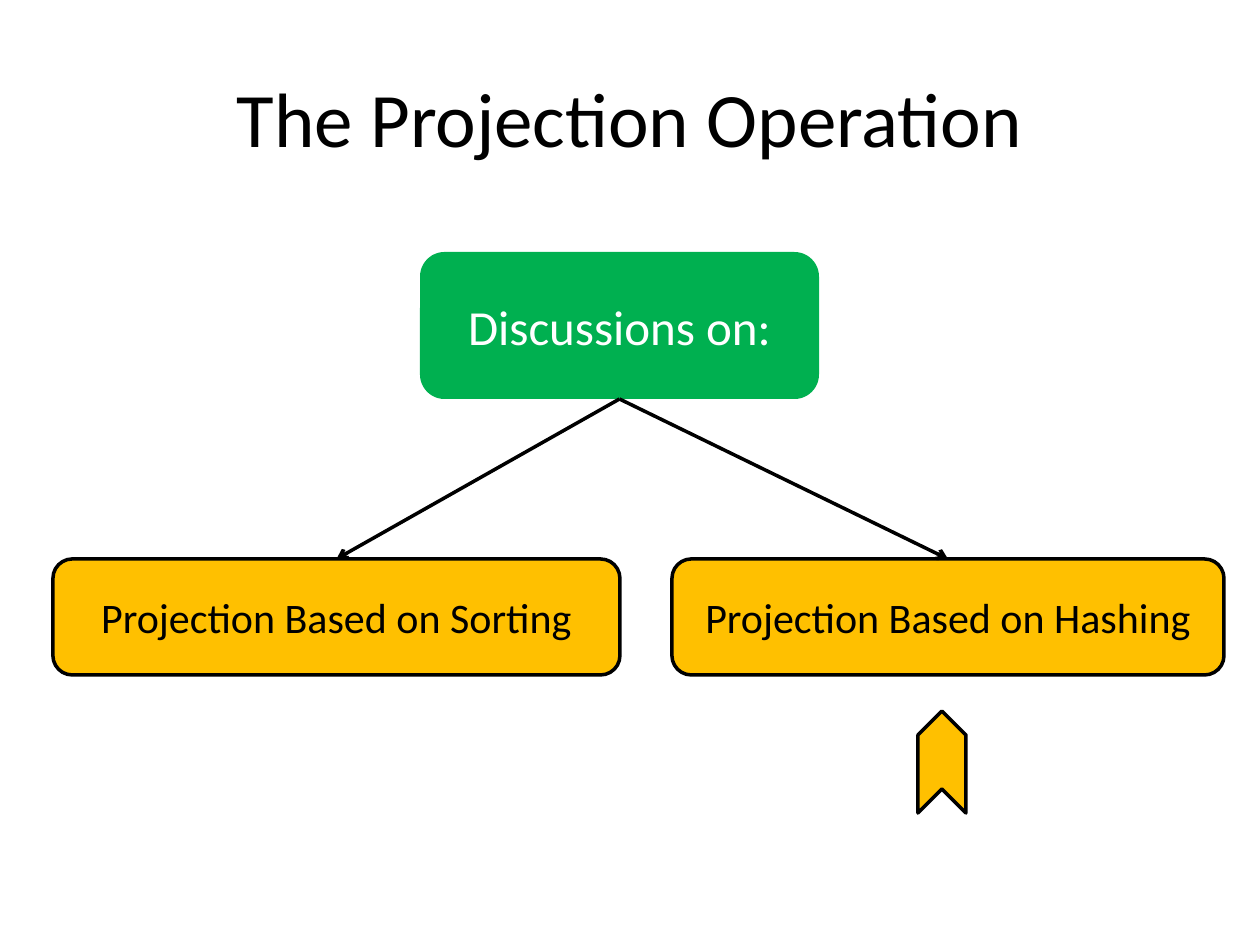
from dataclasses import dataclass

from lxml import etree
from pptx import Presentation
from pptx import util as u
from pptx.dml.color import RGBColor
from pptx.enum import shapes, text
from pptx.oxml import ns

PX = 914400 / 126
TOP, BOTTOM = 0, 2


@dataclass(frozen=True)
class Theme:
    """Colours, type sizes and line width of the slide."""
    font: str = "Calibri"
    ink: str = "000000"
    paper: str = "FFFFFF"
    root: str = "00B050"
    topic: str = "FFC000"
    title_size: int = 44
    root_size: int = 28
    topic_size: int = 24
    line_width: int = 2


THEME = Theme()


def px(*lengths):
    """Turn pixel lengths into EMU."""
    return [u.Emu(round(length * PX)) for length in lengths]


def write(shape, words, size, color, inset_y):
    """Put one centred line of text into a shape."""
    frame = shape.text_frame
    frame.word_wrap = True
    frame.vertical_anchor = text.MSO_ANCHOR.MIDDLE
    frame.margin_top = frame.margin_bottom = px(inset_y)[0]
    paragraph = frame.paragraphs[0]
    paragraph.alignment = text.PP_ALIGN.CENTER
    run = paragraph.add_run()
    run.text = words
    run.font.name = THEME.font
    run.font.size = u.Pt(size)
    run.font.color.rgb = RGBColor.from_string(color)


def stroke(line):
    """Give a line the ink colour and the common width."""
    line.color.rgb = RGBColor.from_string(THEME.ink)
    line.width = u.Pt(THEME.line_width)


def add_title(slide, box, words):
    """Add the slide title."""
    write(slide.shapes.add_textbox(*px(*box)), words, THEME.title_size, THEME.ink, 6)


def add_block(slide, kind, box, fill, outlined=True):
    """Add a filled preset shape, outlined or not."""
    shape = slide.shapes.add_shape(kind, *px(*box))
    shape.shadow.inherit = False
    shape.fill.solid()
    shape.fill.fore_color.rgb = RGBColor.from_string(fill)
    if outlined:
        stroke(shape.line)
    else:
        shape.line.fill.background()
    return shape


def add_root(slide, box, words):
    """Add the box at the head of the tree."""
    root = add_block(slide, shapes.MSO_SHAPE.ROUNDED_RECTANGLE, box, THEME.root, False)
    write(root, words, THEME.root_size, THEME.paper, 6)
    return root


def add_topic(slide, box, words):
    """Add a topic box under the root."""
    topic = add_block(slide, shapes.MSO_SHAPE.ROUNDED_RECTANGLE, box, THEME.topic)
    write(topic, words, THEME.topic_size, THEME.ink, 0)
    return topic


def add_arrow(slide, source, target):
    """Join the bottom of one box to the top of another."""
    arrow = slide.shapes.add_connector(shapes.MSO_CONNECTOR.STRAIGHT, 0, 0, 0, 0)
    arrow.begin_connect(source, BOTTOM)
    arrow.end_connect(target, TOP)
    stroke(arrow.line)
    etree.SubElement(arrow.line._get_or_add_ln(), ns.qn("a:tailEnd"), type="arrow")
    etree.SubElement(arrow._element.spPr, ns.qn("a:effectLst"))


def add_marker(slide, box):
    """Add the chevron that points up at the current topic."""
    add_block(slide, shapes.MSO_SHAPE.CHEVRON, box, THEME.topic).rotation = 270


def main():
    """Build and save the slide."""
    presentation = Presentation()
    presentation.slide_width, presentation.slide_height = px(1260, 945)
    slide = presentation.slides.add_slide(presentation.slide_layouts[6])
    add_title(slide, (63, 38, 1134, 158), "The Projection Operation")
    root = add_root(slide, (420, 252, 399, 147), "Discussions on:")
    topics = [
        (53, 567, "Projection Based on Sorting"),
        (672, 552, "Projection Based on Hashing"),
    ]
    for left, width, words in topics:
        topic = add_topic(slide, (left, 559, width, 116), words)
        add_arrow(slide, root, topic)
    add_marker(slide, (891, 738, 102, 48))
    presentation.save("out.pptx")


if __name__ == "__main__":
    main()
